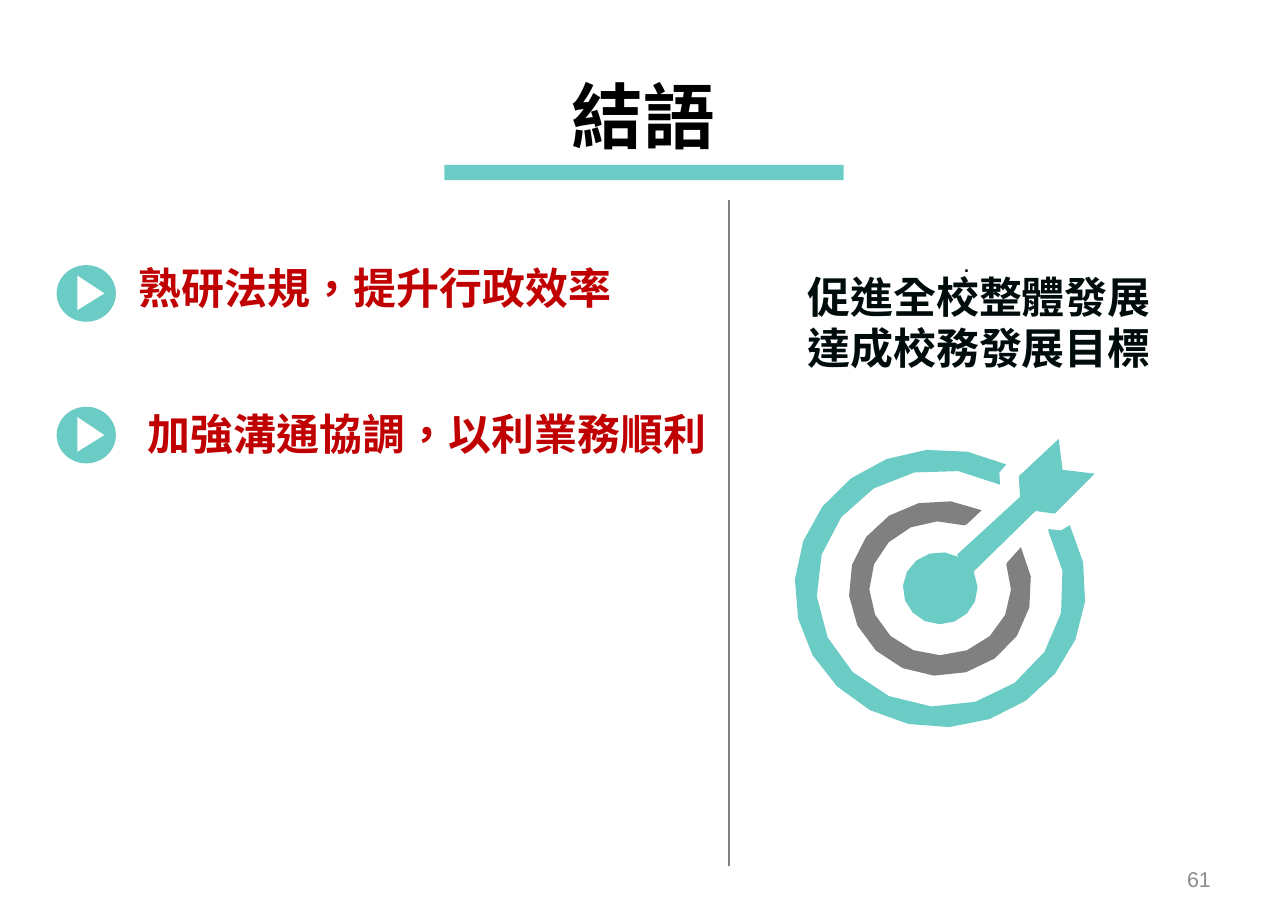
import math

from lxml import etree
from pptx import Presentation
from pptx.dml.color import RGBColor
from pptx.enum import lang, shapes, text
from pptx.oxml.ns import qn
from pptx.util import Inches, Pt

TEAL = RGBColor(0x6B, 0xCB, 0xC5)
GRAY = RGBColor(0x80, 0x80, 0x80)
PAGE_GRAY = RGBColor(0x8C, 0x8C, 0x8C)
RED = RGBColor(0xC0, 0x00, 0x00)
INK = RGBColor(0x00, 0x0C, 0x0C)
BLACK = RGBColor(0x00, 0x00, 0x00)
WHITE = RGBColor(0xFF, 0xFF, 0xFF)

LATIN = "Arial"
CHINESE = "Noto Sans CJK SC"
TARGET_CENTER = (7.3, 4.57)


def paint(shape, color):
    shape.shadow.inherit = False
    shape.fill.solid()
    shape.fill.fore_color.rgb = color
    shape.line.fill.background()


def add_preset(parent, kind, left, top, width, height, color):
    shape = parent.add_shape(kind, Inches(left), Inches(top), Inches(width), Inches(height))
    paint(shape, color)


def add_outline(parent, points, color):
    corners = [(Inches(x), Inches(y)) for x, y in points]
    builder = parent.build_freeform(*corners[0], scale=1.0)
    builder.add_line_segments(corners[1:], close=True)
    paint(builder.convert_to_shape(), color)


def arc(radius_x, radius_y, start, end, steps):
    center_x, center_y = TARGET_CENTER
    angles = [math.radians(start + (end - start) * i / steps) for i in range(steps + 1)]
    return [(center_x + radius_x * math.cos(a), center_y - radius_y * math.sin(a)) for a in angles]


def add_text(page, left, top, width, height, lines, size, color, font=LATIN, bold=False,
             align=text.PP_ALIGN.LEFT, anchor=text.MSO_ANCHOR.TOP, wrap=True, spacing=None):
    box = page.shapes.add_textbox(Inches(left), Inches(top), Inches(width), Inches(height))
    frame = box.text_frame
    frame.word_wrap = wrap
    frame.vertical_anchor = anchor
    for index, line in enumerate(lines):
        para = frame.paragraphs[0] if index == 0 else frame.add_paragraph()
        para.alignment = align
        para.line_spacing = spacing
        span = para.add_run()
        span.text = line
        span.font.name = font
        span.font.size = Pt(size)
        span.font.bold = bold
        span.font.color.rgb = color
        span.font.language_id = lang.MSO_LANGUAGE_ID.TRADITIONAL_CHINESE


def add_play_bullet(page, top):
    group = page.shapes.add_group_shape().shapes
    add_preset(group, shapes.MSO_SHAPE.OVAL, 0.44, top, 0.46, 0.44, TEAL)
    triangle = [(0.6, top + 0.08), (0.81, top + 0.22), (0.6, top + 0.35)]
    add_outline(group, triangle, WHITE)


def add_divider(page):
    line = page.shapes.add_connector(
        shapes.MSO_CONNECTOR.STRAIGHT, Inches(5.66), Inches(6.73), Inches(5.66), Inches(1.55))
    line.line.color.rgb = GRAY
    line.line.width = Pt(0.75)
    etree.SubElement(line._element.spPr, qn("a:effectLst"))


def add_target(page):
    group = page.shapes.add_group_shape().shapes
    outer_ring = (arc(1.13, 1.08, 63, 387, 20) + [(8.24, 4.12), (8.14, 4.11)]
                  + arc(0.96, 0.92, 389, 61, 16) + [(7.76, 3.67)])
    inner_ring = (arc(0.71, 0.68, 63, 388, 16) + [(7.82, 4.37)]
                  + arc(0.55, 0.52, 381, 70, 14) + [(7.51, 4.07)])
    dart = arc(0.29, 0.28, 60, 385, 14) + [
        (7.56, 4.44), (8.04, 3.97), (8.19, 3.99), (8.5, 3.68), (8.25, 3.65),
        (8.22, 3.41), (7.91, 3.7), (7.92, 3.86), (7.43, 4.31)]
    add_outline(group, outer_ring, TEAL)
    add_outline(group, inner_ring, GRAY)
    add_outline(group, dart, TEAL)


def main():
    deck = Presentation()
    deck.slide_width, deck.slide_height = Inches(10), Inches(7.17)
    page = deck.slides.add_slide(deck.slide_layouts[6])
    center, middle = text.PP_ALIGN.CENTER, text.MSO_ANCHOR.MIDDLE

    for top in (2.06, 3.16):
        add_play_bullet(page, top)
    add_divider(page)
    add_preset(page.shapes, shapes.MSO_SHAPE.RECTANGLE, 3.45, 1.28, 3.1, 0.12, TEAL)
    add_target(page)

    add_text(page, 5.2, 1.87, 4.61, 0.34, ["."], 14, BLACK, align=center)
    add_text(page, 2.24, 0.51, 5.51, 0.77, ["結語"], 40, BLACK, bold=True,
             align=center, anchor=middle)
    add_text(page, 7.17, 6.64, 2.33, 0.38, ["61"], 12, PAGE_GRAY,
             align=text.PP_ALIGN.RIGHT, anchor=middle)

    statement = dict(size=24, font=CHINESE, bold=True, spacing=Pt(28.5))
    justify = text.PP_ALIGN.JUSTIFY
    add_text(page, 0.98, 1.99, 3.9, 0.5, ["熟研法規，提升行政效率"],
             color=RED, align=justify, wrap=False, **statement)
    add_text(page, 1.05, 3.12, 4.58, 0.5, ["加強溝通協調，以利業務順利"],
             color=RED, align=justify, wrap=False, **statement)
    add_text(page, 6.17, 2.06, 5, 0.91, ["促進全校整體發展", "達成校務發展目標"],
             color=INK, **statement)

    deck.save("out.pptx")


if __name__ == "__main__":
    main()
